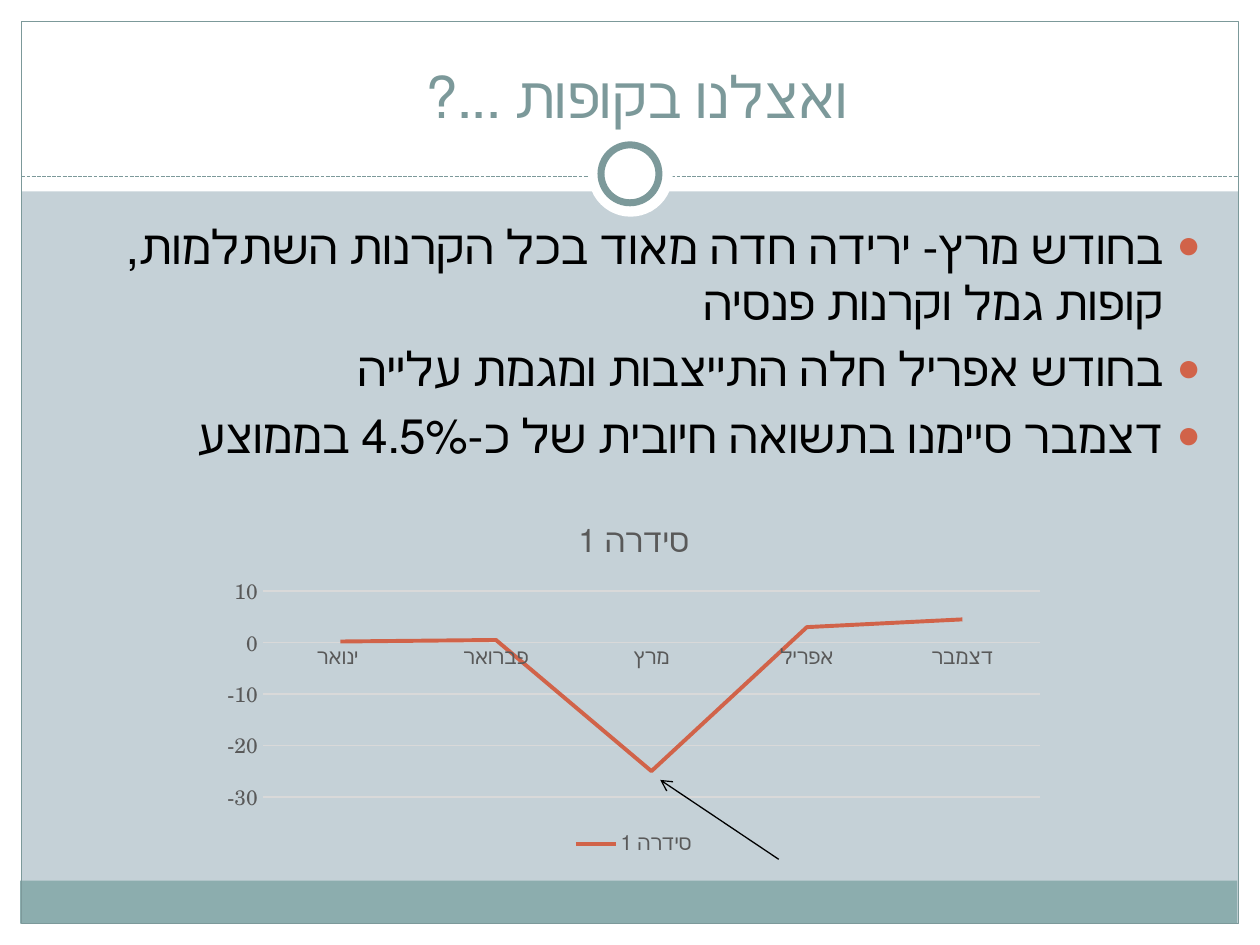
"""Build a slide on the yearly returns of savings funds, with bullets and a line chart."""
from dataclasses import dataclass

from lxml import etree
from pptx import Presentation
from pptx.chart.data import CategoryChartData
from pptx.dml.color import RGBColor
from pptx.enum.chart import (XL_CHART_TYPE, XL_LEGEND_POSITION, XL_MARKER_STYLE,
                             XL_TICK_LABEL_POSITION, XL_TICK_MARK)
from pptx.enum.dml import MSO_LINE
from pptx.enum.shapes import MSO_CONNECTOR, MSO_SHAPE
from pptx.enum.text import MSO_ANCHOR, MSO_AUTO_SIZE, PP_ALIGN
from pptx.oxml.ns import qn
from pptx.util import Inches, Pt

LINE_CHART = XL_CHART_TYPE.LINE
BOTTOM_LEGEND = XL_LEGEND_POSITION.BOTTOM
NO_MARKER = XL_MARKER_STYLE.NONE
NEXT_TO_AXIS = XL_TICK_LABEL_POSITION.NEXT_TO_AXIS
NO_TICK = XL_TICK_MARK.NONE
SYSTEM_DASH = MSO_LINE.SQUARE_DOT
STRAIGHT = MSO_CONNECTOR.STRAIGHT
RECTANGLE, OVAL = MSO_SHAPE.RECTANGLE, MSO_SHAPE.OVAL
ANCHOR_TOP, ANCHOR_BOTTOM = MSO_ANCHOR.TOP, MSO_ANCHOR.BOTTOM
NO_AUTOFIT = MSO_AUTO_SIZE.NONE
CENTER, RIGHT = PP_ALIGN.CENTER, PP_ALIGN.RIGHT


@dataclass(frozen=True)
class Theme:
    """Colours, font and type sizes of the slide."""
    font: str = "TeX Gyre Schola"
    background: str = "C5D1D7"
    white: str = "FFFFFF"
    black: str = "000000"
    band: str = "8CADAE"
    frame: str = "7C999A"
    accent: str = "D16349"
    label: str = "595959"
    grid: str = "D9D9D9"
    title_size: float = 33
    body_size: float = 27
    chart_title_size: float = 18.6
    label_size: float = 12
    thin: float = 0.75
    ring: float = 4
    series: float = 2.25


@dataclass(frozen=True)
class Panel:
    """One shape of the slide frame."""
    left: float
    top: float
    width: float
    height: float
    fill: str | None = None
    line: str | None = None
    weight: float = 0
    preset: int = RECTANGLE


THEME = Theme()
EDGE = 0.17
FRAME = [
    Panel(0, 7.5 - EDGE, 10, EDGE, THEME.white),
    Panel(0, 0, 10, 1.52, THEME.white),
    Panel(0, 0, EDGE, 7.5, THEME.white),
    Panel(10 - EDGE, 0, EDGE, 7.5, THEME.white),
    Panel(0.16, 6.99, 9.66, 0.34, THEME.band),
    Panel(EDGE, EDGE, 9.66, 7.16, None, THEME.frame, THEME.thin),
]
RING = [
    Panel(4.67, 1.05, 0.67, 0.67, THEME.white, preset=OVAL),
    Panel(4.77, 1.15, 0.46, 0.46, THEME.white, THEME.frame, THEME.ring, OVAL),
]
TITLE = "ואצלנו בקופות ...? "
BULLETS = [
    "בחודש מרץ- ירידה חדה מאוד בכל הקרנות השתלמות, קופות גמל וקרנות פנסיה",
    "בחודש אפריל חלה התייצבות ומגמת עלייה",
    "דצמבר סיימנו בתשואה חיובית של כ-4.5% בממוצע",
]
SERIES_NAME = "סידרה 1"
RETURNS = {"ינואר ": 0.2, "פברואר": 0.5, "מרץ": -25, "אפריל": 3, "דצמבר": 4.5}


def color(value: str) -> RGBColor:
    """Turn a hex string into a colour."""
    return RGBColor.from_string(value)


def style_font(font, size: float, value: str) -> None:
    """Apply the theme font with a size and colour."""
    font.name = THEME.font
    font.size = Pt(size)
    font.bold = False
    font.color.rgb = color(value)


def style_line(line, value: str, weight: float) -> None:
    """Give a line its colour and weight."""
    line.color.rgb = color(value)
    line.width = Pt(weight)


def place(shape, left: float, top: float, width: float, height: float) -> None:
    """Move and size a shape in inches."""
    shape.left, shape.top = Inches(left), Inches(top)
    shape.width, shape.height = Inches(width), Inches(height)


def add_panel(slide, panel: Panel) -> None:
    """Draw one frame shape."""
    lengths = map(Inches, (panel.left, panel.top, panel.width, panel.height))
    shape = slide.shapes.add_shape(panel.preset, *lengths)
    shape.shadow.inherit = False
    if panel.fill:
        shape.fill.solid()
        shape.fill.fore_color.rgb = color(panel.fill)
    else:
        shape.fill.background()
    if panel.line:
        style_line(shape.line, panel.line, panel.weight)
    else:
        shape.line.fill.background()


def add_line(slide, start: tuple[float, float], end: tuple[float, float], value: str):
    """Draw a thin straight line without a shadow."""
    connector = slide.shapes.add_connector(STRAIGHT, *map(Inches, start + end))
    style_line(connector.line, value, THEME.thin)
    etree.SubElement(connector.element.spPr, qn("a:effectLst"))
    return connector


def add_text(para, text: str, alignment: int, size: float, value: str) -> None:
    """Write one right-to-left run into a paragraph."""
    para.alignment = alignment
    para._p.get_or_add_pPr().set("rtl", "1")
    span = para.add_run()
    span.text = text
    style_font(span.font, size, value)


def add_bullet(para) -> None:
    """Give a paragraph a round accent bullet with a hanging indent."""
    properties = para._p.get_or_add_pPr()
    indent = Inches(0.3)
    properties.set("marL", str(indent))
    properties.set("marR", "0")
    properties.set("indent", str(-indent))
    bullet_color = etree.SubElement(properties, qn("a:buClr"))
    etree.SubElement(bullet_color, qn("a:srgbClr"), val=THEME.accent)
    etree.SubElement(properties, qn("a:buSzPct"), val="85000")
    etree.SubElement(properties, qn("a:buChar"), char="●")


def fill_placeholders(slide) -> None:
    """Place and fill the title and the bullet list."""
    title, body = slide.shapes.title, slide.placeholders[1]
    place(title, 0.33, 0.25, 9.33, 0.83)
    place(body, 0.33, 1.67, 9.3, 5)
    for box, anchor in ((title, ANCHOR_BOTTOM), (body, ANCHOR_TOP)):
        slide.shapes.element.append(box.element)
        box.text_frame.vertical_anchor = anchor
        box.text_frame.auto_size = NO_AUTOFIT
        box.text_frame.word_wrap = True
    add_text(title.text_frame.paragraphs[0], TITLE, CENTER, THEME.title_size, THEME.frame)
    frame = body.text_frame
    for index, text in enumerate(BULLETS):
        para = frame.add_paragraph() if index else frame.paragraphs[0]
        add_bullet(para)
        add_text(para, text, RIGHT, THEME.body_size, THEME.black)
    frame.paragraphs[0].space_before = Pt(0)


def add_returns_chart(slide) -> None:
    """Draw the line chart of monthly returns."""
    data = CategoryChartData()
    data.categories = list(RETURNS)
    data.add_series(SERIES_NAME, list(RETURNS.values()))
    lengths = map(Inches, (1.67, 3.99, 6.72, 2.83))
    chart = slide.shapes.add_chart(LINE_CHART, *lengths, data).chart
    style_font(chart.font, THEME.label_size, THEME.label)
    chart.has_title = True
    span = chart.chart_title.text_frame.paragraphs[0].add_run()
    span.text = SERIES_NAME
    style_font(span.font, THEME.chart_title_size, THEME.label)
    chart.has_legend = True
    chart.legend.position = BOTTOM_LEGEND
    chart.legend.include_in_layout = False
    style_font(chart.legend.font, THEME.label_size, THEME.label)

    months, values = chart.category_axis, chart.value_axis
    for axis in (months, values):
        axis.major_tick_mark = axis.minor_tick_mark = NO_TICK
        axis.tick_label_position = NEXT_TO_AXIS
        style_font(axis.tick_labels.font, THEME.label_size, THEME.label)
    style_line(months.format.line, THEME.grid, THEME.thin)
    values.format.line.fill.background()
    values.minimum_scale, values.maximum_scale, values.major_unit = -30, 10, 10
    style_line(values.major_gridlines.format.line, THEME.grid, THEME.thin)

    chart.plots[0].vary_by_categories = False
    series = chart.plots[0].series[0]
    series.smooth = False
    series.marker.style = NO_MARKER
    style_line(series.format.line, THEME.accent, THEME.series)


def main() -> None:
    """Build and save the deck."""
    deck = Presentation()
    deck.slide_width, deck.slide_height = Inches(10), Inches(7.5)
    page = deck.slides.add_slide(deck.slide_layouts[1])
    page.background.fill.solid()
    page.background.fill.fore_color.rgb = color(THEME.background)
    for panel in FRAME:
        add_panel(page, panel)
    divider = add_line(page, (EDGE, 1.4), (10 - EDGE, 1.4), THEME.frame)
    divider.line.dash_style = SYSTEM_DASH
    for panel in RING:
        add_panel(page, panel)
    fill_placeholders(page)
    add_returns_chart(page)
    arrow = add_line(page, (6.18, 6.82), (5.24, 6.19), THEME.black)
    etree.SubElement(arrow.line._get_or_add_ln(), qn("a:tailEnd"), type="arrow")
    deck.save("out.pptx")


if __name__ == "__main__":
    main()
